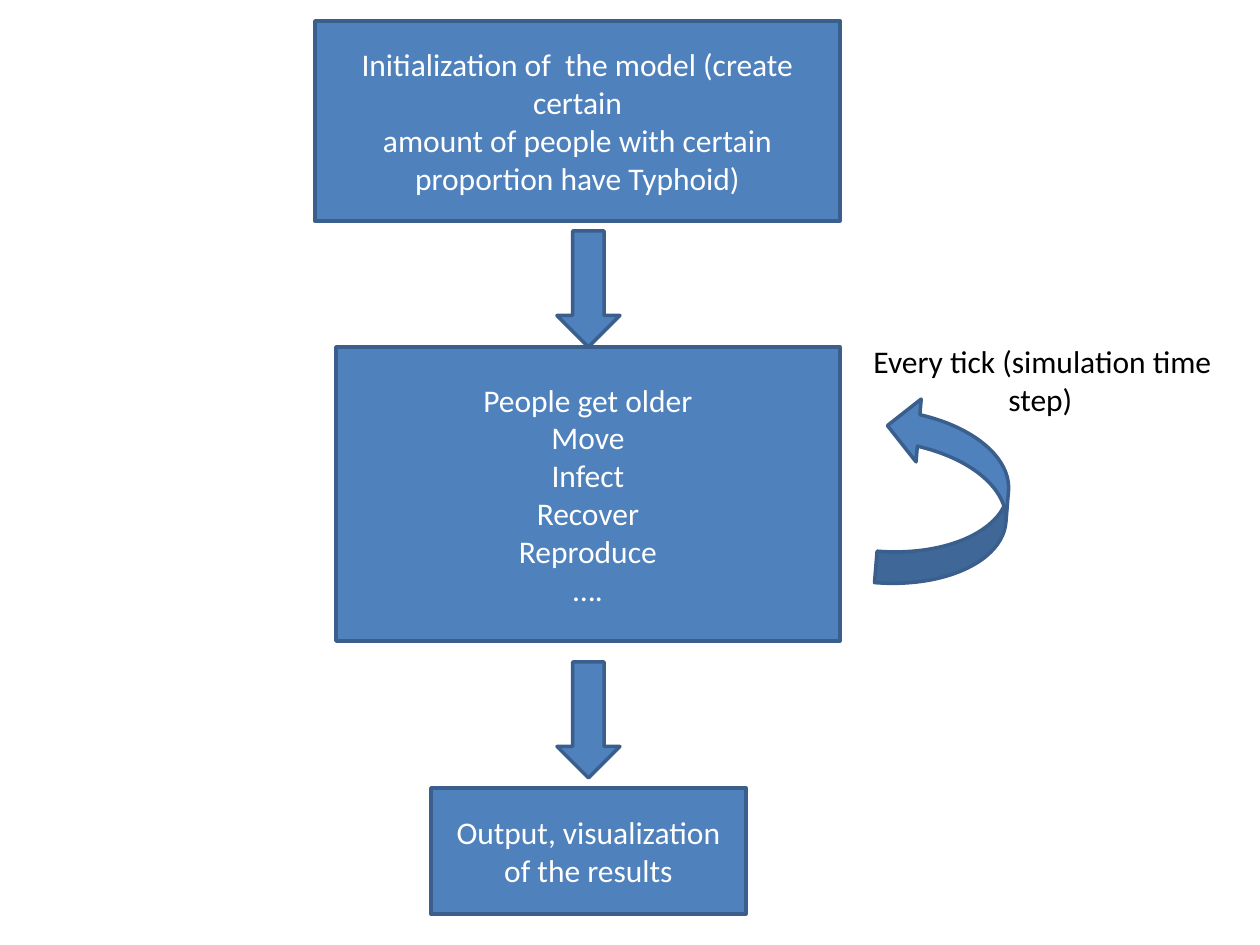
from pptx import Presentation
from pptx.dml.color import RGBColor
from pptx.enum.shapes import MSO_SHAPE as SHAPE
from pptx.enum.text import MSO_ANCHOR as ANCHOR, MSO_AUTO_SIZE as AUTO, PP_ALIGN as ALIGN
from pptx.util import Pt

PX = 914400 / 126
BLUE, EDGE, WHITE, BLACK = "4F81BD", "3A5F8C", "FFFFFF", "000000"


def px(*lengths):
    return [round(n * PX) for n in lengths]


def write(tf, lines, color, align):
    for i, line in enumerate(lines):
        p = tf.paragraphs[0] if i == 0 else tf.add_paragraph()
        p.alignment = align
        r = p.add_run()
        r.text = line
        for name, value in {"name": "Calibri", "size": Pt(18)}.items():
            setattr(r.font, name, value)
        r.font.color.rgb = RGBColor.from_string(color)


prs = Presentation()
prs.slide_width, prs.slide_height = px(1260, 945)
s = prs.slides.add_slide(prs.slide_layouts[6])

# Flow from top to bottom, then the loop arrow: preset, box, rotation, lines
steps = [
    (SHAPE.RECTANGLE, (315, 21, 525, 200), 0,
     ["Initialization of  the model (create certain",
      "amount of people with certain proportion have Typhoid)"]),
    (SHAPE.DOWN_ARROW, (557, 231, 63, 116), 0, []),
    (SHAPE.RECTANGLE, (336, 347, 504, 294), 0,
     ["People get older", "Move", "Infect", "Recover", "Reproduce", "…."]),
    (SHAPE.DOWN_ARROW, (557, 662, 63, 116), 0, []),
    (SHAPE.RECTANGLE, (431, 788, 315, 126), 0,
     ["Output, visualization of the results"]),
    (SHAPE.CURVED_RIGHT_ARROW, (882, 399, 126, 189), 184.7, []),
]
for preset, box, rotation, lines in steps:
    sp = s.shapes.add_shape(preset, *px(*box))
    sp.rotation = rotation
    sp.shadow.inherit = False
    sp.fill.solid()
    sp.fill.fore_color.rgb = RGBColor.from_string(BLUE)
    sp.line.color.rgb = RGBColor.from_string(EDGE)
    sp.line.width = Pt(2)
    sp.text_frame.vertical_anchor = ANCHOR.MIDDLE
    write(sp.text_frame, lines, WHITE, ALIGN.CENTER)

# Loop label, its second line indented
tf = s.shapes.add_textbox(*px(861, 336, 368, 89)).text_frame
tf.word_wrap = False
tf.auto_size = AUTO.SHAPE_TO_FIT_TEXT
write(tf, ["Every tick (simulation time", "step)"], BLACK, ALIGN.LEFT)
tf.paragraphs[1]._p.get_or_add_pPr().set("marL", str(px(135)[0]))

prs.save("out.pptx")
